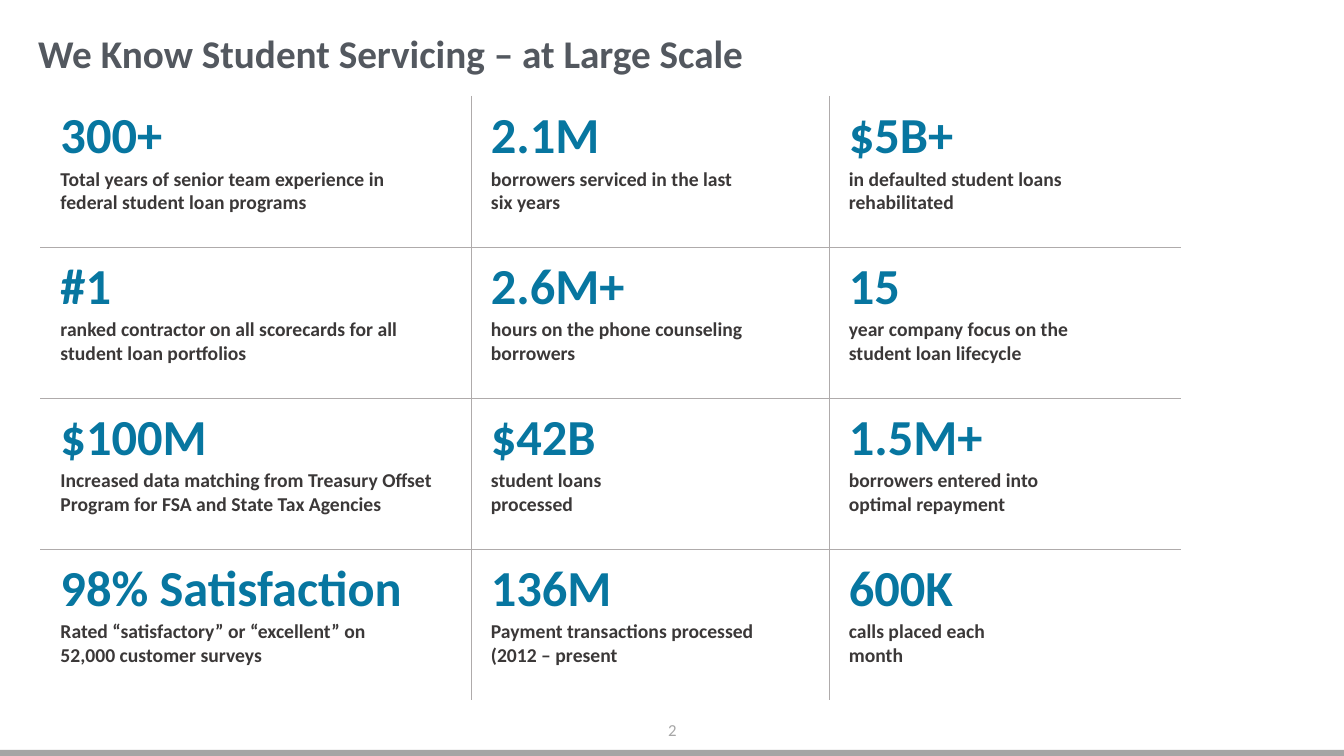
from dataclasses import dataclass

from lxml.etree import SubElement
from pptx import Presentation
from pptx.dml.color import RGBColor as Color
from pptx.enum.shapes import MSO_SHAPE as Shape
from pptx.enum.text import MSO_ANCHOR as Anchor, PP_ALIGN as Align
from pptx.oxml.ns import qn
from pptx.util import Inches, Pt


@dataclass(frozen=True)
class Theme:
    font: str = "Calibri"
    title: str = "53585F"
    figure: str = "0776A0"
    label: str = "3B3838"
    rule: str = "AFABAB"
    bar: str = "A5A5A5"
    number: str = "A6A6A6"
    title_size: int = 28
    figure_size: int = 36
    label_size: int = 14
    number_size: int = 12
    figure_leading: float = 36.7
    rule_width: float = 0.25


THEME = Theme()
WIDTH, HEIGHT = Inches(13.33), Inches(7.5)
COLUMN_SHARES = (32.03, 26.63, 26.25)
ROW_SHARE = 19.97

STATISTICS = (
    (
        ("300+", "Total years of senior team experience in\nfederal student loan programs"),
        ("2.1M", "borrowers serviced in the last\nsix years"),
        ("$5B+", "in defaulted student loans\nrehabilitated"),
    ),
    (
        ("#1", "ranked contractor on all scorecards for all\nstudent loan portfolios"),
        ("2.6M+", "hours on the phone counseling\nborrowers"),
        ("15", "year company focus on the\nstudent loan lifecycle"),
    ),
    (
        ("$100M", "Increased data matching from Treasury Offset Program for FSA and State Tax Agencies"),
        ("$42B", "student loans\nprocessed"),
        ("1.5M+", "borrowers entered into\noptimal repayment"),
    ),
    (
        ("98% Satisfaction", "Rated “satisfactory” or “excellent” on\n52,000 customer surveys"),
        ("136M", "Payment transactions processed\n(2012 – present"),
        ("600K", "calls placed each\nmonth"),
    ),
)


def across(percent):
    return round(WIDTH * percent / 100)


def down(percent):
    return round(HEIGHT * percent / 100)


def area(left, top, width, height):
    return across(left), down(top), across(width), down(height)


def add_text(para, text, size, color, bold=True):
    for index, line in enumerate(text.split("\n")):
        if index:
            para.add_line_break()
        span = para.add_run()
        span.text = line
        span.font.name = THEME.font
        span.font.size = Pt(size)
        span.font.bold = bold
        span.font.color.rgb = Color.from_string(color)


def add_text_box(page, place, text, size, color, bold, align, anchor):
    frame = page.shapes.add_textbox(*place).text_frame
    frame.word_wrap = True
    frame.vertical_anchor = anchor
    para = frame.paragraphs[0]
    para.alignment = align
    add_text(para, text, size, color, bold)
    return para


def add_bar(page, place, color):
    bar = page.shapes.add_shape(Shape.RECTANGLE, *place)
    bar.shadow.inherit = False
    bar.fill.solid()
    bar.fill.fore_color.rgb = Color.from_string(color)
    bar.line.fill.background()


def set_borders(cell, visible):
    properties = cell._tc.get_or_add_tcPr()
    for side, shown in visible.items():
        line = SubElement(properties, qn(f"a:ln{side}"), w=str(Pt(THEME.rule_width)))
        if shown:
            fill = SubElement(line, qn("a:solidFill"))
            SubElement(fill, qn("a:srgbClr"), val=THEME.rule)
        else:
            SubElement(line, qn("a:noFill"))


def fill_cell(cell, figure, label):
    cell.fill.background()
    cell.margin_left = cell.margin_right = cell.margin_top = Inches(0.2)
    cell.margin_bottom = Inches(0.05)
    para = cell.text_frame.paragraphs[0]
    para.line_spacing = Pt(THEME.figure_leading)
    add_text(para, figure, THEME.figure_size, THEME.figure)
    add_text(cell.text_frame.add_paragraph(), label, THEME.label_size, THEME.label)


def add_statistics(page, left, top):
    last_row, last_column = len(STATISTICS) - 1, len(COLUMN_SHARES) - 1
    place = area(left, top, sum(COLUMN_SHARES), ROW_SHARE * len(STATISTICS))
    table = page.shapes.add_table(last_row + 1, last_column + 1, *place).table
    table.first_row = table.horz_banding = False
    for column, share in zip(table.columns, COLUMN_SHARES):
        column.width = across(share)
    for row_index, statistics in enumerate(STATISTICS):
        table.rows[row_index].height = down(ROW_SHARE)
        for column_index, (figure, label) in enumerate(statistics):
            cell = table.cell(row_index, column_index)
            set_borders(cell, {
                "L": column_index > 0,
                "R": column_index < last_column,
                "T": row_index > 0,
                "B": row_index < last_row,
            })
            fill_cell(cell, figure, label)


def main():
    deck = Presentation()
    deck.slide_width, deck.slide_height = WIDTH, HEIGHT
    page = deck.slides.add_slide(deck.slide_layouts[6])
    add_bar(page, area(0, 99.2, 100, 0.8), THEME.bar)
    add_text_box(page, area(45.3, 94.53, 9.45, 4), "2", THEME.number_size,
                 THEME.number, False, Align.CENTER, Anchor.TOP)
    title = add_text_box(page, area(2.1, 2, 92.5, 10.67),
                         "We Know Student Servicing – at Large Scale",
                         THEME.title_size, THEME.title, True, Align.LEFT, Anchor.MIDDLE)
    title.line_spacing = 0.9
    add_statistics(page, 3, 12.67)
    deck.save("out.pptx")


if __name__ == "__main__":
    main()
